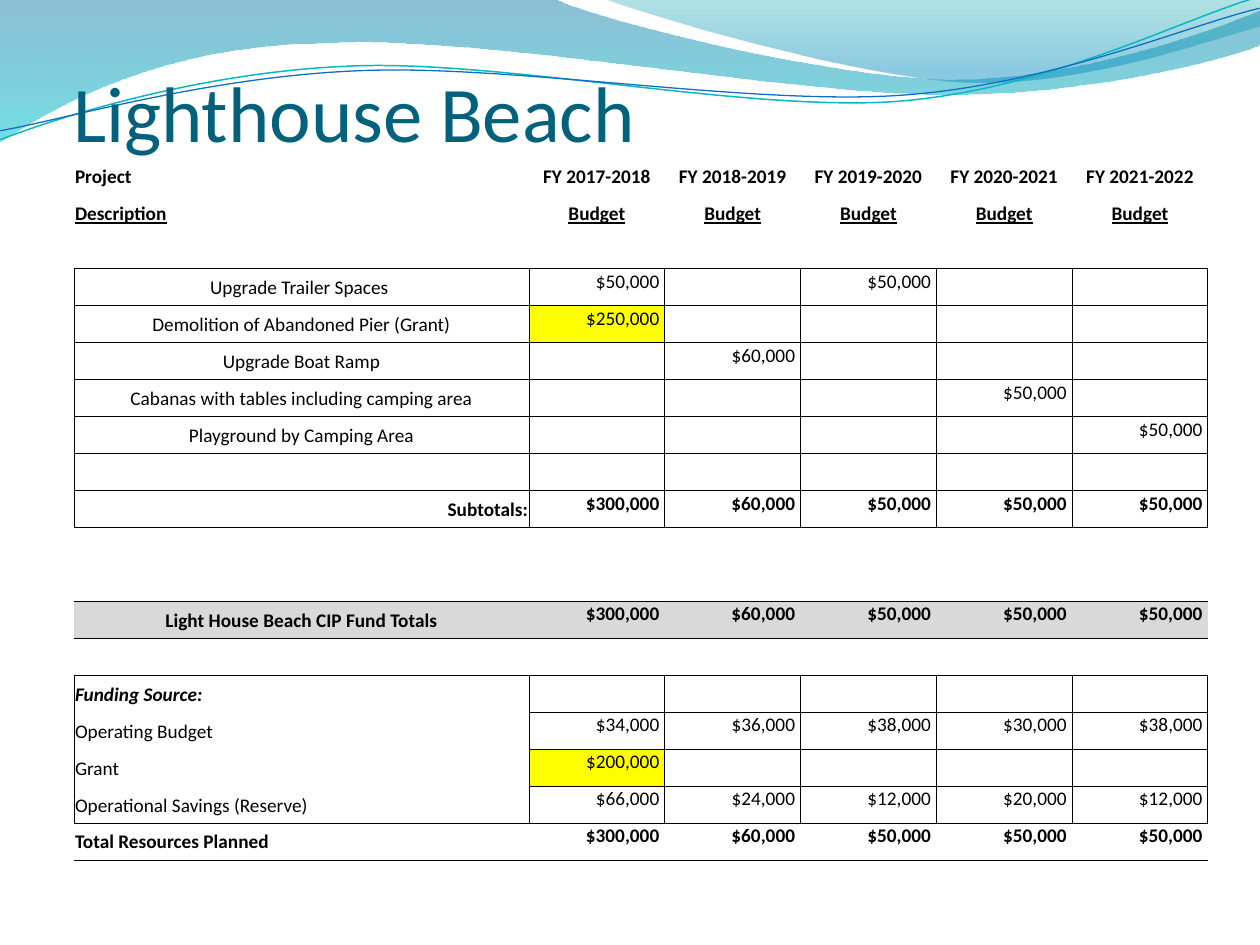
from lxml.etree import SubElement
from pptx import Presentation
from pptx.dml.color import RGBColor
from pptx.enum.text import MSO_ANCHOR, MSO_AUTO_SIZE, PP_ALIGN
from pptx.oxml.ns import qn
from pptx.util import Pt

EMU_PER_PX = 914400 / 126
FONT = "Calibri"
BLACK, GREY, YELLOW, TITLE_TEAL = "000000", "D9D9D9", "FFFF00", "04617B"
PLAIN_STYLE = "{2D5ABB26-0587-4C30-8999-92F81FD0307C}"
TABLE_LEFT, TABLE_TOP, TABLE_WIDTH, ROW_HEIGHT = 74, 158, 1134, 37
LABEL_WIDTH, YEAR_COUNT = 455, 5
COLUMN_WIDTHS = [LABEL_WIDTH] + [(TABLE_WIDTH - LABEL_WIDTH) / YEAR_COUNT] * YEAR_COUNT

# Each path is a start point, then one tuple per segment:
# (x, y) is a line, (x1, y1, x2, y2, x, y) is a cubic curve.
BROAD_WAVE = [(0, 0), (554, -1), (600, 21, 837, 79, 955, 79),
              (1075, 79, 1207, 33, 1260, 11), (1261, 45),
              (1238, 55, 1096, 96, 940, 94), (784, 94, 481, 35, 324, 43),
              (161, 45, 58, 105, -1, 142)]
RIGHT_WAVE = [(604, -1), (641, 14, 859, 78, 969, 82),
              (1079, 86, 1211, 40, 1260, 26), (1260, 0)]
TEAL_CURVE = [(-2, 110), (58, 90, 200, 52, 350, 53),
              (500, 53, 745, 118, 896, 114), (1049, 109, 1184, 45, 1260, 27)]
BLUE_CURVE = [(-2, 101), (57, 94, 207, 57, 358, 58),
              (509, 58, 751, 112, 902, 108), (1052, 104, 1188, 52, 1262, 38)]
CURVE_ROTATION = 357.3

YEARS = [f"FY {year}-{year + 1}" for year in range(2017, 2022)]
TOTALS = ["$300,000", "$60,000", "$50,000", "$50,000", "$50,000"]
EMPTY = [""] * YEAR_COUNT

# Row kind, label, values
ROWS = [
    ("header", "Project", YEARS),
    ("underlined", "Description", ["Budget"] * YEAR_COUNT),
    ("blank", "", EMPTY),
    ("project", "Upgrade Trailer Spaces ", ["$50,000", "", "$50,000", "", ""]),
    ("project", "Demolition of Abandoned Pier (Grant)", ["$250,000", "", "", "", ""]),
    ("project", "Upgrade Boat Ramp", ["", "$60,000", "", "", ""]),
    ("project", "Cabanas with tables including camping area", ["", "", "", "$50,000", ""]),
    ("project", "Playground by Camping Area", ["", "", "", "", "$50,000"]),
    ("project", "", EMPTY),
    ("subtotal", "Subtotals:", TOTALS),
    ("blank", "", EMPTY),
    ("blank", "", EMPTY),
    ("fund total", "Light House Beach CIP Fund Totals", TOTALS),
    ("blank", "", EMPTY),
    ("funding title", "Funding Source:", EMPTY),
    ("funding", "Operating Budget", ["$34,000", "$36,000", "$38,000", "$30,000", "$38,000"]),
    ("funding", "Grant", ["$200,000", "", "", "", ""]),
    ("funding end", "Operational Savings (Reserve)",
     ["$66,000", "$24,000", "$12,000", "$20,000", "$12,000"]),
    ("resources", "Total Resources Planned", TOTALS),
]
GRANT_AMOUNTS = {"$250,000", "$200,000"}

# Row kind: label borders, value borders, label alignment
LAYOUTS = {
    "header": ("", "", PP_ALIGN.LEFT),
    "underlined": ("", "", PP_ALIGN.LEFT),
    "blank": ("", "", PP_ALIGN.LEFT),
    "project": ("LRTB", "LRTB", PP_ALIGN.CENTER),
    "subtotal": ("LRTB", "LRTB", PP_ALIGN.RIGHT),
    "fund total": ("TB", "TB", PP_ALIGN.CENTER),
    "funding title": ("LRT", "LRTB", PP_ALIGN.LEFT),
    "funding": ("LR", "LRTB", PP_ALIGN.LEFT),
    "funding end": ("LRB", "LRTB", PP_ALIGN.LEFT),
    "resources": ("TB", "TB", PP_ALIGN.LEFT),
}
BOLD_KINDS = {"header", "underlined", "subtotal", "fund total", "resources"}


def px(value):
    return round(value * EMU_PER_PX)


def color(hex_value):
    return RGBColor.from_string(hex_value)


def add_outline(slide, path, closed):
    """Add a freeform of lines and cubic curves behind the title."""
    start, *segments = path
    builder = slide.shapes.build_freeform(px(start[0]), px(start[1]))
    for segment in segments:
        points = zip(segment[::2], segment[1::2])
        builder.add_line_segments([(px(x), px(y)) for x, y in points], close=False)
    if closed:
        builder.add_line_segments([], close=True)
    shape = builder.convert_to_shape()
    lines = iter(list(shape.element.iter(qn("a:lnTo"))))
    for segment in segments:
        first = next(lines)
        if len(segment) == 6:
            first.tag = qn("a:cubicBezTo")
            for _ in range(2):
                line = next(lines)
                first.append(line[0])
                line.getparent().remove(line)
    shape.shadow.inherit = False
    slide.shapes.title.element.addprevious(shape.element)
    return shape


def add_wave(slide, path, stops):
    """Stops are (position, colour, opacity in percent), from top to bottom."""
    shape = add_outline(slide, path, True)
    shape.line.fill.background()
    shape.fill.gradient()
    shape.fill.gradient_angle = 270
    for stop, (position, hex_value, _) in zip(shape.fill.gradient_stops, stops):
        stop.position = position
        stop.color.rgb = color(hex_value)
    for element, stop in zip(shape.element.iter(qn("a:srgbClr")), stops):
        SubElement(element, qn("a:alpha"), val=str(stop[2] * 1000))


def add_curve(slide, path, hex_value, width):
    shape = add_outline(slide, path, False)
    shape.rotation = CURVE_ROTATION
    shape.fill.background()
    shape.line.color.rgb = color(hex_value)
    shape.line.width = Pt(width)


def write_text(paragraph, text, size=11, hex_value=BLACK, bold=False, italic=False,
               underline=False, align=PP_ALIGN.LEFT):
    paragraph.alignment = align
    if not text:
        SubElement(paragraph._p, qn("a:endParaRPr"), sz=str(size * 100))
        return
    run = paragraph.add_run()
    run.text = text
    font = run.font
    font.name, font.size, font.color.rgb = FONT, Pt(size), color(hex_value)
    font.bold, font.italic, font.underline = bold, italic, underline


def set_borders(cell, sides):
    """Draw the named sides and clear the others; no sides leaves all unset."""
    properties = cell._tc.get_or_add_tcPr()
    for side in "LRTB" if sides else "":
        line = SubElement(properties, qn(f"a:ln{side}"), w=str(Pt(0.5)))
        if side in sides:
            fill = SubElement(line, qn("a:solidFill"))
            SubElement(fill, qn("a:srgbClr"), val=BLACK)
        else:
            SubElement(line, qn("a:noFill"))


def format_cell(cell, text, sides, fill=None, anchor=MSO_ANCHOR.BOTTOM, **text_format):
    cell.margin_left = cell.margin_top = cell.margin_right = px(1)
    cell.margin_bottom = px(6)
    cell.vertical_anchor = anchor
    set_borders(cell, sides)
    if fill:
        cell.fill.solid()
        cell.fill.fore_color.rgb = color(fill)
    else:
        cell.fill.background()
    write_text(cell.text_frame.paragraphs[0], text, **text_format)


def add_title(slide, text):
    title = slide.shapes.title
    title.left, title.top, title.width, title.height = px(73), px(63), px(1134), px(95)
    frame = title.text_frame
    frame.auto_size = MSO_AUTO_SIZE.NONE
    frame.vertical_anchor = MSO_ANCHOR.BOTTOM
    frame.margin_left = frame.margin_right = frame.margin_bottom = 0
    frame.margin_top = px(6)
    write_text(frame.paragraphs[0], text, size=45, hex_value=TITLE_TEAL)


def add_budget_table(slide):
    frame = slide.shapes.add_table(
        len(ROWS), len(COLUMN_WIDTHS), px(TABLE_LEFT), px(TABLE_TOP),
        px(TABLE_WIDTH), px(ROW_HEIGHT * len(ROWS)))
    table = frame.table
    table.first_row = table.horz_banding = False
    table._tbl.tblPr.find(qn("a:tableStyleId")).text = PLAIN_STYLE
    for column, width in zip(table.columns, COLUMN_WIDTHS):
        column.width = px(width)
    for row, (kind, label, values) in zip(table.rows, ROWS):
        row.height = px(ROW_HEIGHT)
        label_sides, value_sides, label_align = LAYOUTS[kind]
        row_fill = GREY if kind == "fund total" else None
        style = {"bold": kind in BOLD_KINDS, "underline": kind == "underlined"}
        heading = kind in ("header", "underlined")
        value_style = {"align": PP_ALIGN.CENTER} if heading else {
            "align": PP_ALIGN.RIGHT, "anchor": MSO_ANCHOR.TOP}
        label_cell, *value_cells = row.cells
        label_style = {"bold": True, "italic": True} if kind == "funding title" else style
        format_cell(label_cell, label, label_sides, row_fill, align=label_align, **label_style)
        for cell, value in zip(value_cells, values):
            fill = YELLOW if value in GRANT_AMOUNTS else row_fill
            text = f" {value} " if value.startswith("$") else value
            format_cell(cell, text, value_sides, fill, **value_style, **style)


def main():
    presentation = Presentation()
    presentation.slide_width, presentation.slide_height = px(1260), px(945)
    slide = presentation.slides.add_slide(presentation.slide_layouts[5])
    add_wave(slide, BROAD_WAVE, [(0, "0074A1", 45), (1, "00C6CF", 55)])
    add_wave(slide, RIGHT_WAVE, [(0, "00A1A9", 30), (0.8, "008BBF", 45)])
    add_curve(slide, TEAL_CURVE, "0AB8BF", 0.85)
    add_curve(slide, BLUE_CURVE, "0F6FC6", 0.75)
    add_title(slide, "Lighthouse Beach")
    add_budget_table(slide)
    presentation.save("out.pptx")


if __name__ == "__main__":
    main()
